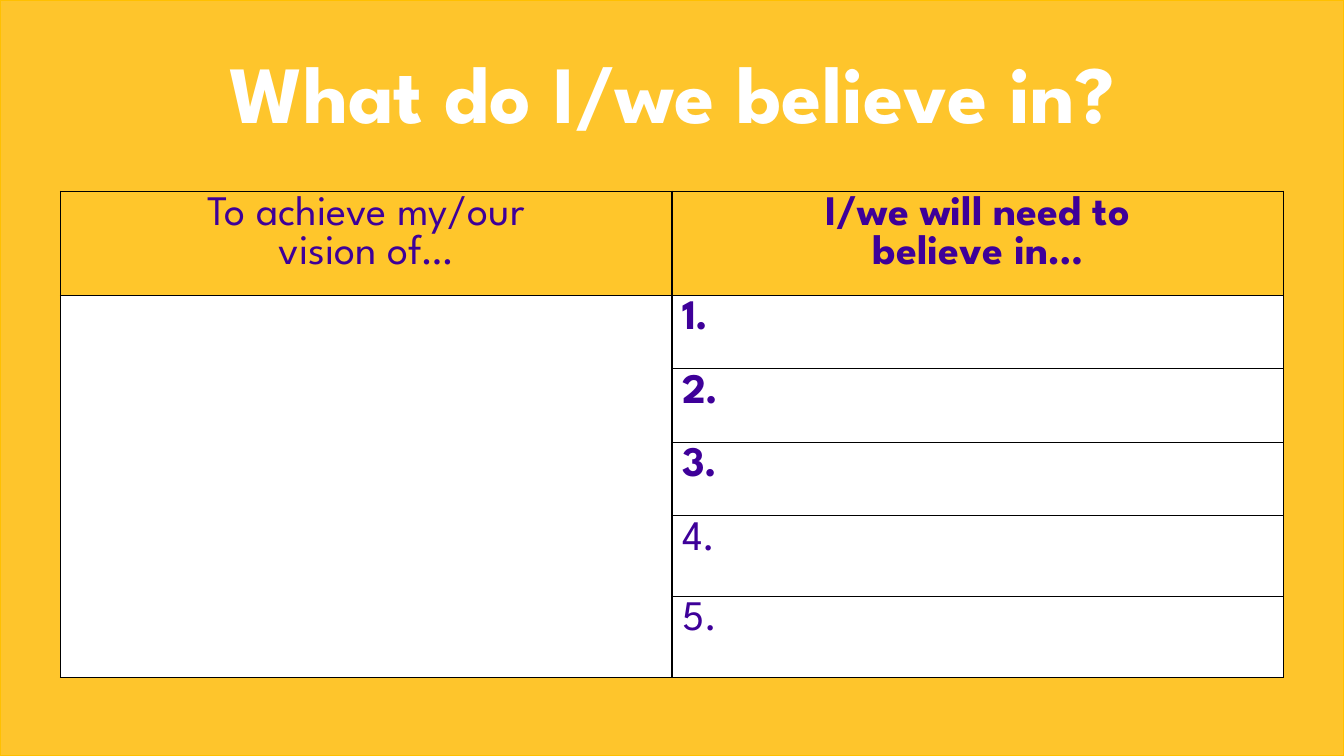
from dataclasses import dataclass

import lxml.etree
import pptx
import pptx.dml.color
import pptx.enum.shapes
import pptx.enum.text
import pptx.oxml.ns
import pptx.util


@dataclass(frozen=True)
class Theme:
    font: str = "League Spartan"
    backdrop: str = "FEC52C"
    backdrop_edge: str = "FFC000"
    header: str = "FFC62B"
    paper: str = "FFFFFF"
    ink: str = "3E0099"
    rule: str = "000000"
    title_size: int = 58
    body_size: int = 30
    line_width: int = 1


THEME = Theme()
WIDTH, HEIGHT = pptx.util.Inches(13.33), pptx.util.Inches(7.5)
CENTER = pptx.enum.text.PP_ALIGN.CENTER
LEFT = pptx.enum.text.PP_ALIGN.LEFT
HEADINGS = [
    (["To achieve my/our", "vision of…"], False),
    (["I/we will need to", "believe in…"], True),
]
BELIEF_COUNT = 5
BOLD_BELIEFS = 3
ROW_HEIGHTS = [1.03, 0.73, 0.73, 0.73, 0.8, 0.8]


def rgb(value):
    return pptx.dml.color.RGBColor.from_string(value)


def write(frame, lines, size, color, bold, align):
    for index, line in enumerate(lines):
        paragraph = frame.add_paragraph() if index else frame.paragraphs[0]
        paragraph.alignment = align
        run = paragraph.add_run()
        run.text = line
        run.font.name = THEME.font
        run.font.size = pptx.util.Pt(size)
        run.font.bold = bold
        run.font.color.rgb = rgb(color)


def style_cell(cell, fill):
    properties = cell._tc.get_or_add_tcPr()
    qn = pptx.oxml.ns.qn
    for side in ("a:lnL", "a:lnR", "a:lnT", "a:lnB"):
        width = str(pptx.util.Pt(THEME.line_width))
        edge = lxml.etree.SubElement(properties, qn(side), w=width)
        solid = lxml.etree.SubElement(edge, qn("a:solidFill"))
        lxml.etree.SubElement(solid, qn("a:srgbClr"), val=THEME.rule)
    cell.fill.solid()
    cell.fill.fore_color.rgb = rgb(fill)


def add_backdrop(slide, left, top, width, height):
    backdrop = slide.shapes.add_shape(
        pptx.enum.shapes.MSO_SHAPE.RECTANGLE, left, top, width, height)
    backdrop.shadow.inherit = False
    backdrop.fill.solid()
    backdrop.fill.fore_color.rgb = rgb(THEME.backdrop)
    backdrop.line.color.rgb = rgb(THEME.backdrop_edge)
    backdrop.line.width = pptx.util.Pt(THEME.line_width)


def add_title(slide, left, top, width, height):
    frame = slide.shapes.add_textbox(left, top, width, height).text_frame
    frame.word_wrap = True
    frame.vertical_anchor = pptx.enum.text.MSO_ANCHOR.BOTTOM
    write(frame, ["What do I/we believe in?"], THEME.title_size,
          THEME.paper, True, CENTER)


def add_beliefs_table(slide, left, top, width, height):
    table = slide.shapes.add_table(
        BELIEF_COUNT + 1, len(HEADINGS), left, top, width, height).table
    for column in table.columns:
        column.width = int(width / len(HEADINGS))
    for row, share in zip(table.rows, ROW_HEIGHTS):
        row.height = int(height * share / sum(ROW_HEIGHTS))
    for row_index in range(BELIEF_COUNT + 1):
        for column_index in range(len(HEADINGS)):
            style_cell(table.cell(row_index, column_index),
                       THEME.paper if row_index else THEME.header)
    for column_index, (lines, bold) in enumerate(HEADINGS):
        write(table.cell(0, column_index).text_frame, lines,
              THEME.body_size, THEME.ink, bold, CENTER)
    table.cell(1, 0).merge(table.cell(BELIEF_COUNT, 0))
    for number in range(1, BELIEF_COUNT + 1):
        write(table.cell(number, 1).text_frame, [f"{number}."],
              THEME.body_size, THEME.ink, number <= BOLD_BELIEFS, LEFT)


def main():
    deck = pptx.Presentation()
    deck.slide_width, deck.slide_height = WIDTH, HEIGHT
    slide = deck.slides.add_slide(deck.slide_layouts[6])
    margin = int(WIDTH * 0.045)
    add_backdrop(slide, 0, 0, WIDTH, HEIGHT)
    add_beliefs_table(slide, margin, int(HEIGHT * 0.253),
                      WIDTH - 2 * margin, pptx.util.Inches(sum(ROW_HEIGHTS)))
    add_title(slide, 0, int(HEIGHT * 0.048), WIDTH, int(HEIGHT * 0.144))
    deck.save("out.pptx")


if __name__ == "__main__":
    main()
